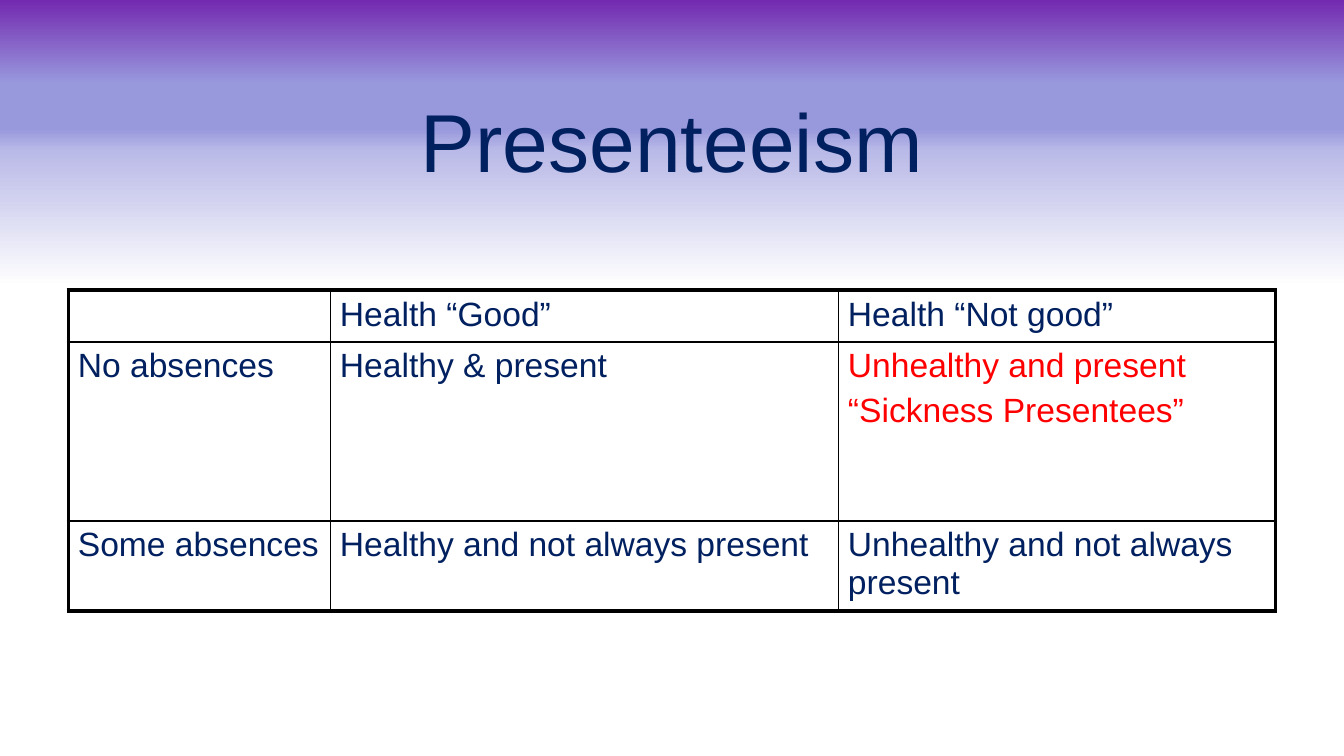
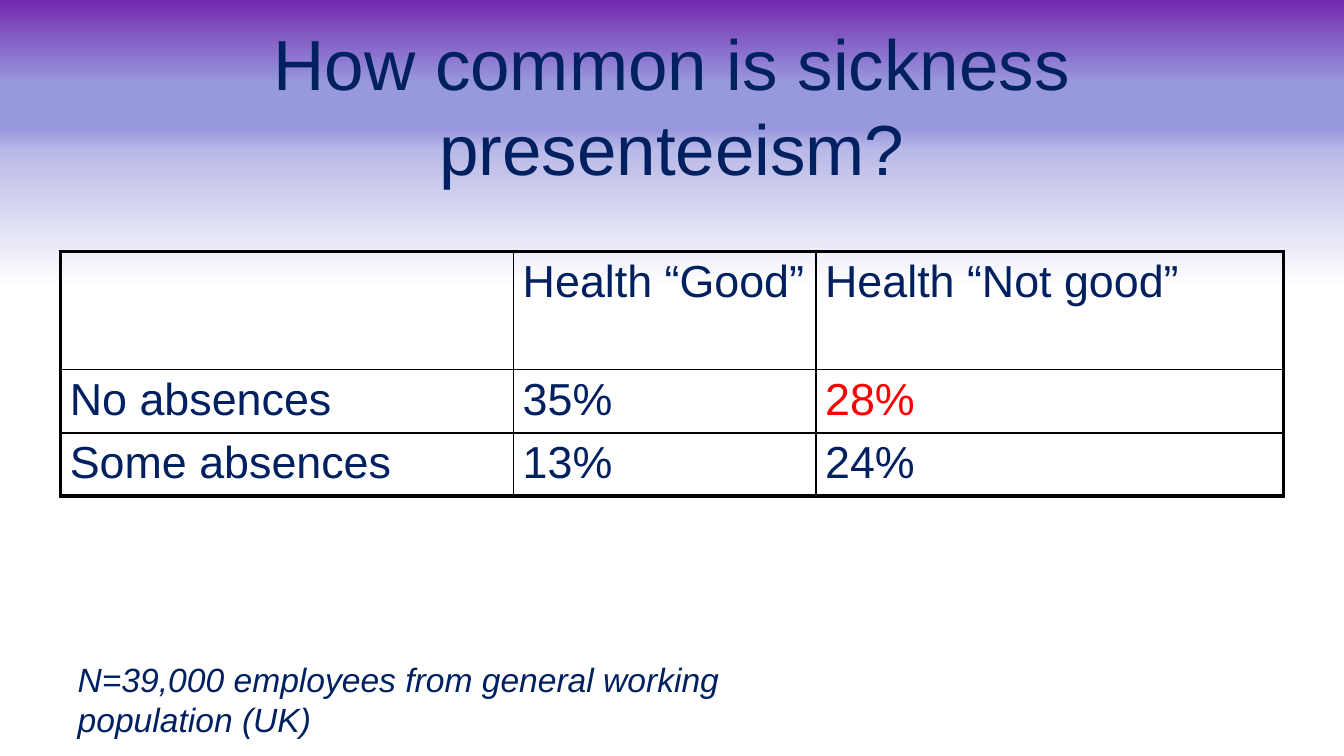
from lxml.etree import SubElement
from pptx import Presentation
from pptx.dml.color import RGBColor
from pptx.enum.text import MSO_ANCHOR as Anchor, PP_ALIGN as Align
from pptx.oxml.ns import qn
from pptx.util import Inches, Pt

NAVY = "002060"
RED = "FF0000"
BLACK = "000000"
FONT = "Arial"
BACKGROUND_STOPS = [(0, "732AB0"), (11, "9898DD"), (17, "9898DD"), (20, "BABAE8"), (38, "FFFFFF")]
OUTER_BORDER = 2.25
INNER_BORDER = 1


def color(value):
    return RGBColor.from_string(value)


class Deck:
    def __init__(self, width, height):
        self.presentation = Presentation()
        self.presentation.slide_width = Inches(width)
        self.presentation.slide_height = Inches(height)
        self.slide = None
        self.set_background()

    def set_background(self):
        master = self.presentation.slide_master
        master.background.fill.gradient()
        gradient = master.element.find(".//" + qn("a:gradFill"))
        for child in list(gradient):
            gradient.remove(child)
        stops = SubElement(gradient, qn("a:gsLst"))
        for percent, value in BACKGROUND_STOPS:
            stop = SubElement(stops, qn("a:gs"), pos=str(percent * 1000))
            SubElement(stop, qn("a:srgbClr"), val=value)
        SubElement(gradient, qn("a:lin"), ang="5400000", scaled="0")

    def add_slide(self, title, top, size):
        self.slide = self.presentation.slides.add_slide(self.presentation.slide_layouts[5])
        shape = self.slide.shapes.title
        shape.left, shape.top = Inches(0.5), Inches(top)
        shape.width, shape.height = Inches(9), Inches(0.94)
        shape.text_frame.vertical_anchor = Anchor.MIDDLE
        paragraph = shape.text_frame.paragraphs[0]
        paragraph.alignment = Align.CENTER
        self.add_run(paragraph, title, size)

    def add_run(self, paragraph, text, size, value=NAVY, italic=None):
        run = paragraph.add_run()
        run.text = text
        run.font.name = FONT
        run.font.size = Pt(size)
        run.font.italic = italic
        run.font.color.rgb = color(value)

    def set_space_before(self, paragraph, percent):
        paragraph.space_before = Pt(0)
        spacing = paragraph._p.pPr.find(qn("a:spcBef"))
        spacing.remove(spacing[0])
        SubElement(spacing, qn("a:spcPct"), val=str(percent * 1000))

    def add_note(self, text, left, top, width, height):
        frame = self.slide.shapes.add_textbox(
            Inches(left), Inches(top), Inches(width), Inches(height)).text_frame
        frame.word_wrap = True
        paragraph = frame.paragraphs[0]
        self.set_space_before(paragraph, 50)
        self.add_run(paragraph, text, 18, italic=True)

    def add_table(self, left, top, widths, heights, rows, size, highlight):
        table = self.slide.shapes.add_table(
            len(heights), len(widths), Inches(left), Inches(top),
            Inches(sum(widths)), Inches(sum(heights))).table
        table.first_row = table.horz_banding = False
        for column, width in zip(table.columns, widths):
            column.width = Inches(width)
        for row, height in zip(table.rows, heights):
            row.height = Inches(height)
        last_row, last_column = len(heights) - 1, len(widths) - 1
        for i, texts in enumerate(rows):
            for j, text in enumerate(texts):
                cell = table.cell(i, j)
                self.fill_cell(cell, text, size, RED if (i, j) == highlight else NAVY)
                outer_sides = {"L": j == 0, "R": j == last_column, "T": i == 0, "B": i == last_row}
                self.set_borders(cell, outer_sides)
                cell.fill.background()

    def fill_cell(self, cell, text, size, value):
        cell.margin_left = cell.margin_right = Inches(0.07)
        cell.margin_top = cell.margin_bottom = Inches(0.04)
        frame = cell.text_frame
        if not text:
            SubElement(frame.paragraphs[0]._p, qn("a:endParaRPr"), sz=str(size * 100))
            return
        for index, line in enumerate(text.split("\n")):
            paragraph = frame.add_paragraph() if index else frame.paragraphs[0]
            self.set_space_before(paragraph, 20)
            self.add_run(paragraph, line, size, value)

    def set_borders(self, cell, outer_sides):
        properties = cell._tc.get_or_add_tcPr()
        for side, is_outer in outer_sides.items():
            width = Pt(OUTER_BORDER if is_outer else INNER_BORDER)
            line = SubElement(properties, qn("a:ln" + side), w=str(width))
            fill = SubElement(line, qn("a:solidFill"))
            SubElement(fill, qn("a:srgbClr"), val=BLACK)


def main():
    deck = Deck(10, 10 * 9 / 16)
    header = ["", "Health “Good”", "Health “Not good”"]

    deck.add_slide("Presenteeism", 0.57, 44)
    deck.add_table(0.51, 2.16, [1.95, 3.78, 3.25], [0.37, 1.33, 0.67], [
        header,
        ["No absences", "Healthy & present", "Unhealthy and present\n“Sickness Presentees”"],
        ["Some absences", "Healthy and not always present", "Unhealthy and not always present"],
    ], 18, highlight=(1, 2))

    deck.add_slide("How common is sickness presenteeism?", 0.31, 38)
    deck.add_table(0.45, 1.87, [3.37, 2.25, 3.48], [0.88, 0.47, 0.47], [
        header,
        ["No absences", "35%", "28%"],
        ["Some absences", "13%", "24%"],
    ], 24, highlight=(1, 2))
    deck.add_note("N=39,000 employees from general working population (UK)", 0.48, 4.85, 5.43, 0.71)

    deck.presentation.save("out.pptx")


if __name__ == "__main__":
    main()
